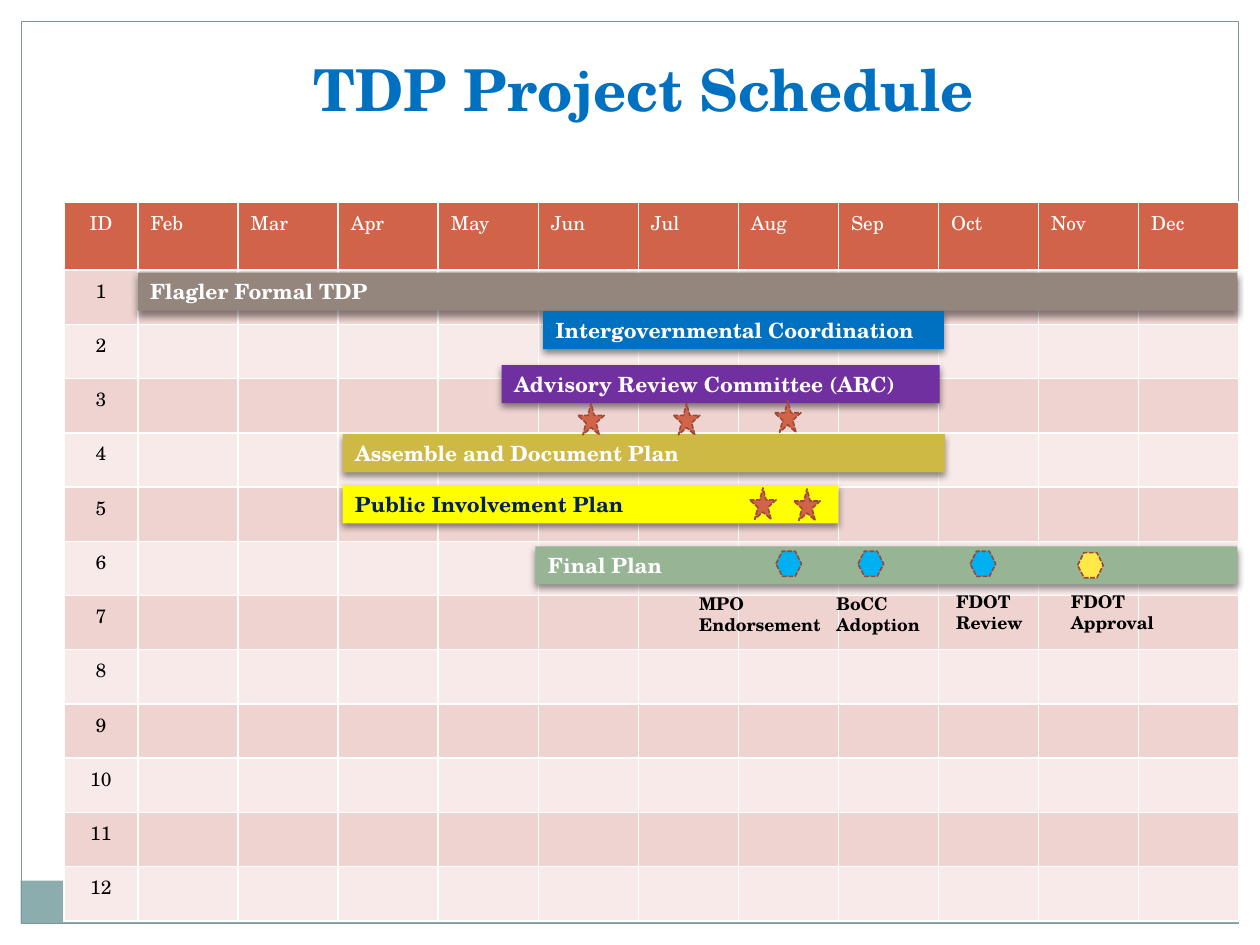
from lxml import etree
from pptx import Presentation
from pptx.dml.color import RGBColor
from pptx.enum.dml import MSO_LINE
from pptx.enum.shapes import MSO_SHAPE
from pptx.enum.text import MSO_ANCHOR, MSO_AUTO_SIZE, PP_ALIGN
from pptx.oxml.ns import qn
from pptx.util import Pt

RECT, STAR, HEXAGON = MSO_SHAPE.RECTANGLE, MSO_SHAPE.STAR_5_POINT, MSO_SHAPE.HEXAGON
CENTER, LEFT, TOP = PP_ALIGN.CENTER, PP_ALIGN.LEFT, MSO_ANCHOR.TOP
GROW, DASH = MSO_AUTO_SIZE.SHAPE_TO_FIT_TEXT, MSO_LINE.SQUARE_DOT
FONT = "TeX Gyre Schola"

TITLE = "TDP Project Schedule"
MONTHS = ["Feb", "Mar", "Apr", "May", "Jun", "Jul", "Aug", "Sep", "Oct", "Nov", "Dec"]
TASK_COUNT = 12
HEADER_FILL, ROW_FILLS = "D16349", ("EED3D0", "F7EAE9")
TABLE_LEFT, TABLE_TOP = 36.5, 115.4
ID_WIDTH, MONTH_WIDTH = 42.4, 57.2
HEADER_HEIGHT, ROW_HEIGHT = 39, 31

BAR_HEIGHT = 21.8
BARS = [
    ("Flagler Formal TDP", 78.7, 155.8, 628.2, "95867D", "FFFFFF"),
    ("Intergovernmental Coordination", 310.3, 177.8, 229, "0070C0", "FFFFFF"),
    ("Advisory Review Committee (ARC)", 286.7, 208.6, 250.3, "7030A0", "FFFFFF"),
    ("Assemble and Document Plan", 195.8, 248.1, 344.2, "CFB945", "FFFFFF"),
    ("Public Involvement Plan", 195.8, 277.3, 283.4, "FFFF00", "002060"),
    ("Final Plan", 306, 312.2, 401, "97B595", "FFFFFF"),
]
STAR_SIZE, HEXAGON_SIZE = (15.1, 18), (14.6, 14.4)
MEETINGS = [(330.2, 230.5), (384.8, 230.5), (442.6, 229), (428.4, 278.8), (453.6, 279.4)]
MILESTONES = [
    ("MPO Endorsement", 392.4, 335.5, 87.1, 443.4, 315, "00B0F0"),
    ("BoCC Adoption", 470.9, 335.5, 66.2, 490.3, 315, "00B0F0"),
    ("FDOT Review", 539.3, 334.3, 76.3, 554.4, 315, "00B0F0"),
    ("FDOT Approval", 604.8, 334.3, 94, 615.8, 315.8, "FFE947"),
]


def color(value):
    """Turn a hex string into a colour."""
    return RGBColor.from_string(value)


def write(frame, text, size=12, ink="000000", bold=False, align=LEFT):
    """Put one formatted paragraph into a text frame."""
    frame.word_wrap = True
    frame.vertical_anchor = TOP
    paragraph = frame.paragraphs[0]
    paragraph.alignment = align
    run = paragraph.add_run()
    run.text = text
    run.font.name, run.font.size, run.font.bold = FONT, Pt(size), bold
    run.font.color.rgb = color(ink)


def draw(slide, kind, left, top, width, height, fill=None, line=None, weight=0.75):
    """Add a preset shape without a shadow."""
    shape = slide.shapes.add_shape(kind, Pt(left), Pt(top), Pt(width), Pt(height))
    shape.shadow.inherit = False
    if fill:
        shape.fill.solid()
        shape.fill.fore_color.rgb = color(fill)
    else:
        shape.fill.background()
    if line:
        shape.line.color.rgb = color(line)
        shape.line.width = Pt(weight)
    else:
        shape.line.fill.background()
    return shape


def draw_marker(slide, kind, left, top, size, fill):
    """Add a marker with a dashed outline."""
    marker = draw(slide, kind, left, top, *size, fill, "9B4936", 0.9)
    marker.line.dash_style = DASH


def cast_shadow(shape):
    """Give a shape a soft shadow straight below it."""
    effects = shape.element.spPr.find(qn("a:effectLst"))
    shadow = etree.SubElement(effects, qn("a:outerShdw"), blurRad=str(Pt(4)), dist=str(Pt(2)),
                              dir="5400000", algn="ctr", rotWithShape="0")
    black = etree.SubElement(shadow, qn("a:srgbClr"), val="000000")
    etree.SubElement(black, qn("a:alpha"), val="45000")


def add_text(slide, text, left, top, width, height, **style):
    """Add a text box."""
    box = slide.shapes.add_textbox(Pt(left), Pt(top), Pt(width), Pt(height))
    write(box.text_frame, text, **style)
    return box


def add_schedule(slide):
    """Add the grid of months and numbered tasks."""
    widths = [ID_WIDTH] + [MONTH_WIDTH] * len(MONTHS)
    heights = [HEADER_HEIGHT] + [ROW_HEIGHT] * TASK_COUNT
    grid = slide.shapes.add_table(len(heights), len(widths), Pt(TABLE_LEFT), Pt(TABLE_TOP),
                                  Pt(sum(widths)), Pt(sum(heights))).table
    for column, width in zip(grid.columns, widths):
        column.width = Pt(width)
    for number, height in enumerate(heights):
        grid.rows[number].height = Pt(height)
        for cell in grid.rows[number].cells:
            cell.fill.solid()
            cell.fill.fore_color.rgb = color(ROW_FILLS[(number - 1) % 2] if number else HEADER_FILL)
        if number:
            write(grid.cell(number, 0).text_frame, str(number), size=11, align=CENTER)
    for index, heading in enumerate(["ID"] + MONTHS):
        write(grid.cell(0, index).text_frame, heading, size=11, ink="FFFFFF",
              align=LEFT if index else CENTER)


def main():
    """Build the schedule slide."""
    deck = Presentation()
    deck.slide_width, deck.slide_height = Pt(720), Pt(540)
    slide = deck.slides.add_slide(deck.slide_layouts[6])

    draw(slide, RECT, 11.8, 503.3, 695.5, 24.5, fill="8CADAE")
    draw(slide, RECT, 12.2, 12.2, 695.5, 515.5, line="7C999A")
    add_schedule(slide)
    add_text(slide, TITLE, 23.8, 27.4, 688.3, 82.8, size=33, ink="0070C0", bold=True, align=CENTER)

    for task, left, top, width, fill, ink in BARS:
        bar = draw(slide, RECT, left, top, width, BAR_HEIGHT, fill)
        cast_shadow(bar)
        write(bar.text_frame, task, ink=ink, bold=True)
        bar.text_frame.auto_size = GROW
    for left, top in MEETINGS:
        draw_marker(slide, STAR, left, top, STAR_SIZE, HEADER_FILL)
    for step, left, top, width, marker_left, marker_top, fill in MILESTONES:
        draw_marker(slide, HEXAGON, marker_left, marker_top, HEXAGON_SIZE, fill)
        label = add_text(slide, step, left, top, width, 31.5, size=10, bold=True)
        label.text_frame.auto_size = GROW

    deck.save("out.pptx")


if __name__ == "__main__":
    main()
